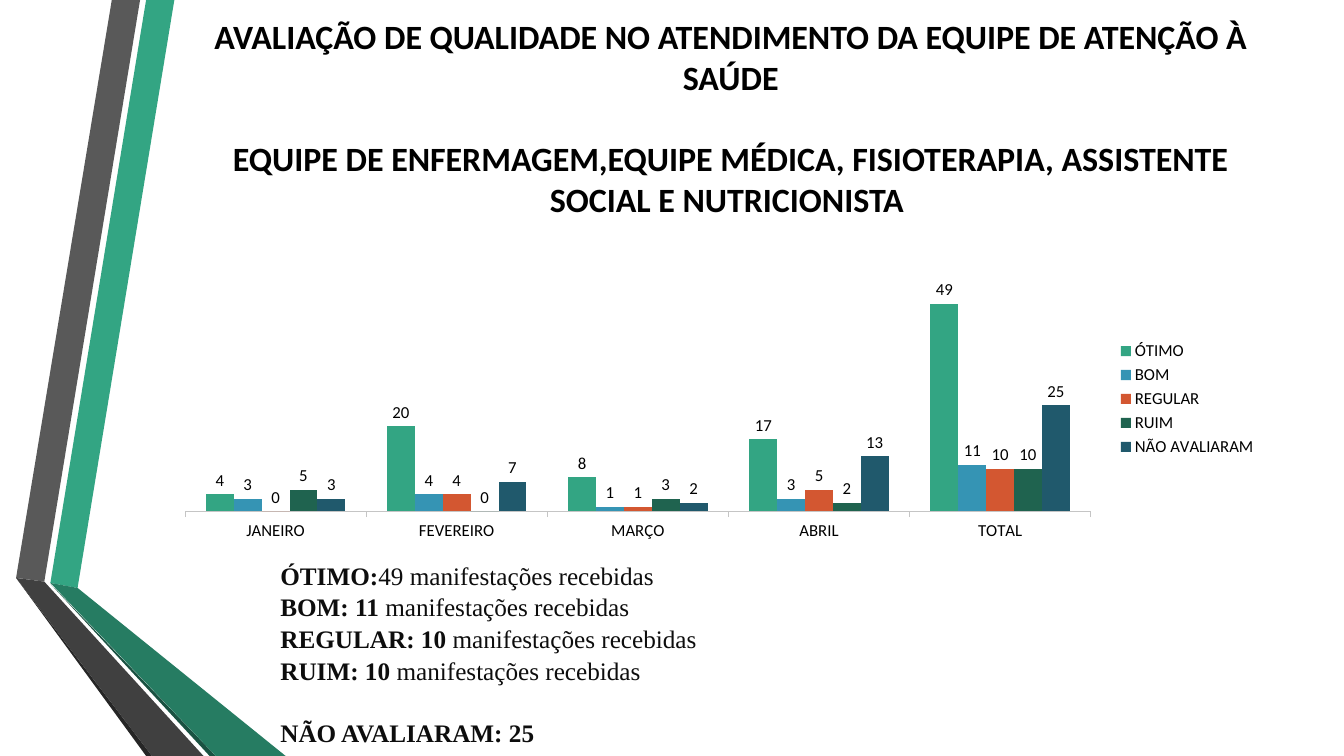
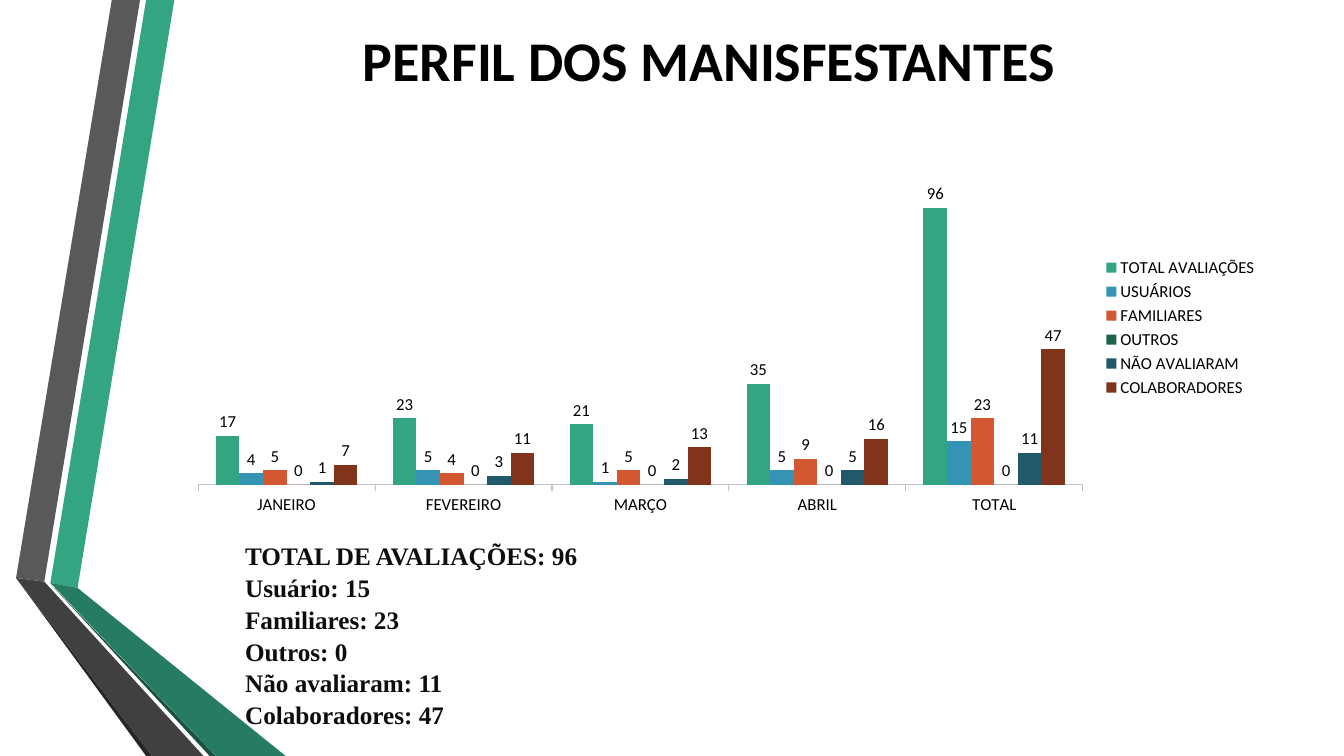
from lxml.etree import SubElement
from pptx import Presentation
from pptx.chart.data import CategoryChartData
from pptx.dml.color import RGBColor
from pptx.enum.chart import XL_CHART_TYPE as ChartType
from pptx.enum.chart import XL_LABEL_POSITION as LabelPosition
from pptx.enum.chart import XL_LEGEND_POSITION as LegendPosition
from pptx.enum.chart import XL_TICK_LABEL_POSITION as TickLabels
from pptx.enum.chart import XL_TICK_MARK as TickMark
from pptx.enum.text import MSO_ANCHOR as Anchor
from pptx.enum.text import PP_ALIGN as Align
from pptx.oxml.ns import qn
from pptx.util import Emu, Pt

WIDTH, HEIGHT = Emu(12192000), Emu(6858000)
COLUMNS, ROWS = 160, 90

COLORS = {
    "title": "000000", "body": "0D0D0D", "axis": "C5C5C5",
    "green": "33A583", "blue": "3594B4", "orange": "D35731",
    "forest": "1F634F", "petrol": "20596C", "brown": "81331B",
    "gray": "595959", "charcoal": "404040", "gray_edge": "262626",
    "green_fold": "267C62", "green_edge": "1A5242",
}
SERIES_COLORS = ("green", "blue", "orange", "forest", "petrol", "brown")
MONTHS = ("JANEIRO", "FEVEREIRO", "MARÇO", "ABRIL", "TOTAL")

RIBBONS = (
    ("green", ((6, 69.4), (9.24, 70), (20.76, 0), (17.4, 0))),
    ("gray", ((16.68, 0), (13.32, 0), (1.92, 68.8), (5.28, 69.24))),
    ("gray_edge", ((1.92, 68.8), (17.4, 90), (18.1, 90))),
    ("green_edge", ((6, 69.5), (24.96, 90), (25.7, 90))),
    ("green_fold", ((6, 69.4), (25.7, 90), (34, 90), (9.24, 70))),
    ("charcoal", ((24.24, 90), (5.28, 69.24), (1.92, 68.8), (18.1, 90))),
)


def rgb(key):
    return RGBColor.from_string(COLORS[key])


def at(column, row):
    return int(WIDTH * column / COLUMNS), int(HEIGHT * row / ROWS)


def area(left, top, width, height):
    return (*at(left, top), *at(width, height))


def style(font, size, color, face="Calibri", bold=None):
    font.name, font.size, font.bold = face, Pt(size), bold
    font.color.rgb = rgb(color)


def add_ribbons(slide):
    for color, corners in RIBBONS:
        first, *others = (at(*corner) for corner in corners)
        outline = slide.shapes.build_freeform(*first)
        outline.add_line_segments(others, close=True)
        ribbon = outline.convert_to_shape()
        ribbon.shadow.inherit = False
        ribbon.fill.solid()
        ribbon.fill.fore_color.rgb = rgb(color)
        ribbon.line.fill.background()


def text_frame(slide, place):
    frame = slide.shapes.add_textbox(*area(*place)).text_frame
    frame.word_wrap = True
    return frame


def paragraphs(frame, count):
    return [frame.paragraphs[0], *(frame.add_paragraph() for _ in range(count - 1))]


def add_title(slide, place, size, *lines):
    frame = text_frame(slide, place)
    frame.vertical_anchor = Anchor.MIDDLE
    for index, (heading, line) in enumerate(zip(paragraphs(frame, len(lines)), lines)):
        heading.text = line
        heading.alignment = Align.CENTER
        heading.space_before = Pt(29 if index else 0)
        style(heading.font, size, "title", bold=True)


def add_summary(slide, place, rows, gap_before=None):
    frame = text_frame(slide, place)
    for index, (entry, row) in enumerate(zip(paragraphs(frame, len(rows)), rows)):
        strong, *plain = row
        entry.line_spacing = 1.05
        entry.space_before = Pt(21.6 if index == gap_before else 0)
        style(entry.font, 18, "body", "Times New Roman")
        for words, bold in ((strong, True), *((rest, False) for rest in plain)):
            run = entry.add_run()
            run.text, run.font.bold = words, bold


def place_plot(chart, **shares):
    plot_area = chart.plots[0]._element.getparent()
    layout = plot_area.find(qn("c:layout"))
    if layout is None:
        layout = SubElement(plot_area, qn("c:layout"))
        plot_area.insert(0, layout)
    manual = SubElement(layout, qn("c:manualLayout"))
    settings = {"layoutTarget": "inner", "xMode": "edge", "yMode": "edge", **shares}
    for tag, value in settings.items():
        SubElement(manual, qn(f"c:{tag}")).set("val", str(value))


def add_columns(slide, place, ratings, maximum, plot_width, plot_height):
    figures = CategoryChartData()
    figures.categories = MONTHS
    for name, counts in ratings.items():
        figures.add_series(name, counts)
    chart = slide.shapes.add_chart(
        ChartType.COLUMN_CLUSTERED, *area(*place), figures).chart
    style(chart.font, 12, "title")
    chart.has_title = False
    chart.has_legend = True
    chart.legend.position = LegendPosition.RIGHT
    chart.legend.include_in_layout = False

    months, scale = chart.category_axis, chart.value_axis
    months.major_tick_mark = TickMark.OUTSIDE
    months.tick_label_position = TickLabels.LOW
    months.format.line.color.rgb = rgb("axis")
    months.format.line.width = Pt(0.75)
    scale.visible = scale.has_major_gridlines = False
    scale.minimum_scale, scale.maximum_scale = 0, maximum

    columns = chart.plots[0]
    columns.gap_width, columns.overlap = 150, 0
    columns.vary_by_categories = False
    for rating, color in zip(columns.series, SERIES_COLORS):
        rating.format.fill.solid()
        rating.format.fill.fore_color.rgb = rgb(color)
        rating.data_labels.show_value = True
        rating.data_labels.position = LabelPosition.OUTSIDE_END
        style(rating.data_labels.font, 12, "title")
    place_plot(chart, x=0.02, y=0.02, w=plot_width, h=plot_height)


def new_slide(deck):
    slide = deck.slides.add_slide(deck.slide_layouts[6])
    add_ribbons(slide)
    return slide


def add_quality(deck):
    slide = new_slide(deck)
    add_title(
        slide, (21.5, 1.9, 131, 24.1), 24.3,
        "AVALIAÇÃO DE QUALIDADE NO ATENDIMENTO DA EQUIPE DE ATENÇÃO À SAÚDE",
        "EQUIPE DE ENFERMAGEM,EQUIPE MÉDICA, FISIOTERAPIA, ASSISTENTE SOCIAL E NUTRICIONISTA ")
    received = "manifestações recebidas"
    add_summary(slide, (32.2, 65.9, 120.2, 23), (
        ("ÓTIMO:", f"49 {received}"),
        ("BOM: 11 ", received),
        ("REGULAR: 10 ", received),
        ("RUIM: 10 ", received),
        ("NÃO AVALIARAM: 25",),
    ), gap_before=4)
    add_columns(slide, (19.4, 29.9, 131.5, 35.2), {
        "ÓTIMO": (4, 20, 8, 17, 49),
        "BOM": (3, 4, 1, 3, 11),
        "REGULAR": (0, 4, 1, 5, 10),
        "RUIM": (5, 0, 3, 2, 10),
        "NÃO AVALIARAM": (3, 7, 2, 13, 25),
    }, 60, 0.82, 0.86)


def add_profile(deck):
    slide = new_slide(deck)
    add_title(slide, (19.4, 1.1, 131.5, 11.8), 40, "PERFIL DOS MANISFESTANTES ")
    add_summary(slide, (28, 63.6, 123, 25), (
        ("TOTAL DE AVALIAÇÕES: 96",),
        ("Usuário: 15",),
        ("Familiares: 23",),
        ("Outros: 0",),
        ("Não avaliaram: 11",),
        ("Colaboradores: 47",),
    ))
    add_columns(slide, (21, 15.6, 130, 46.8), {
        "TOTAL AVALIAÇÕES": (17, 23, 21, 35, 96),
        "USUÁRIOS": (4, 5, 1, 5, 15),
        "FAMILIARES": (5, 4, 5, 9, 23),
        "OUTROS": (0, 0, 0, 0, 0),
        "NÃO AVALIARAM": (1, 3, 2, 5, 11),
        "COLABORADORES": (7, 11, 13, 16, 47),
    }, 120, 0.81, 0.88)


def main():
    deck = Presentation()
    deck.slide_width, deck.slide_height = WIDTH, HEIGHT
    add_quality(deck)
    add_profile(deck)
    deck.save("out.pptx")


if __name__ == "__main__":
    main()
